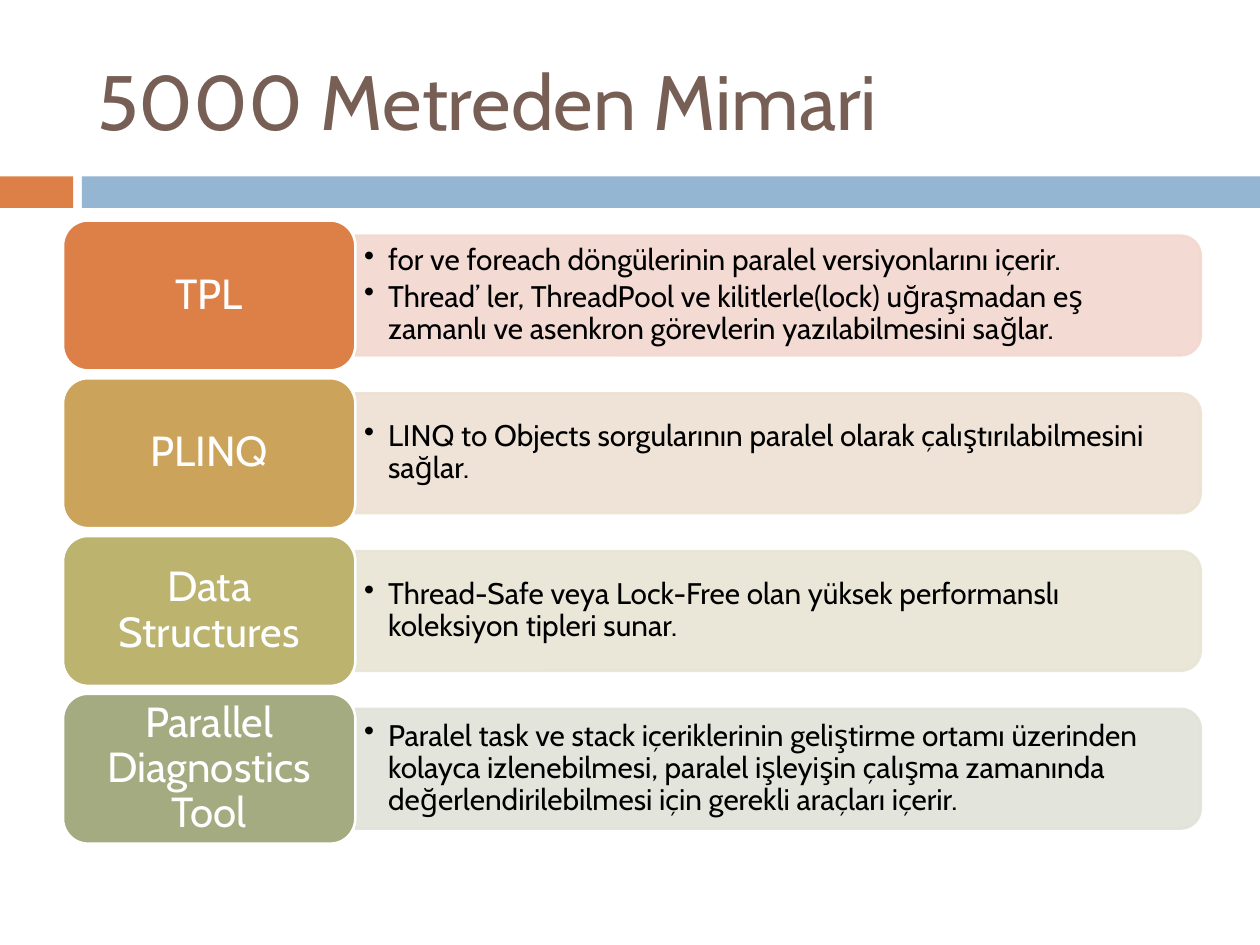
from lxml import etree
from pptx import Presentation, util as u
from pptx.dml.color import RGBColor
from pptx.enum import shapes, text
from pptx.oxml.ns import qn

COLS, ROWS = 100, 75
HUES = {
    "title": "775F55", "orange": "DD8047", "blue": "94B6D2",
    "white": "FFFFFF", "black": "000000",
    "gold": "CCA35B", "olive": "BBB36E", "sage": "A5AB81",
    "rose": "F2D8CF", "sand": "EDE1D2", "cream": "E8E5D5", "mist": "E1E2D8",
}
ITEMS = [
    ("TPL", "orange", "rose", [
        "for ve foreach döngülerinin paralel versiyonlarını içerir.",
        "Thread’ ler, ThreadPool ve kilitlerle(lock) uğraşmadan eş zamanlı "
        "ve asenkron görevlerin yazılabilmesini sağlar."]),
    ("PLINQ", "gold", "sand", [
        "LINQ to Objects sorgularının paralel olarak çalıştırılabilmesini sağlar."]),
    ("Data Structures", "olive", "cream", [
        "Thread-Safe veya Lock-Free olan yüksek performanslı koleksiyon tipleri sunar."]),
    ("Parallel Diagnostics Tool", "sage", "mist", [
        "Paralel task ve stack içeriklerinin geliştirme ortamı üzerinden kolayca "
        "izlenebilmesi, paralel işleyişin çalışma zamanında değerlendirilebilmesi "
        "için gerekli araçları içerir."]),
]


class Deck:
    font = "Cabin"

    def __init__(self):
        self.prs = Presentation()
        self.prs.slide_width, self.prs.slide_height = u.Inches(10), u.Inches(7.5)
        self.slide = self.prs.slides.add_slide(self.prs.slide_layouts[5])

    def hue(self, name):
        return RGBColor.from_string(HUES[name])

    def box(self, x, y, w, h):
        dx, dy = self.prs.slide_width / COLS, self.prs.slide_height / ROWS
        return [round(v) for v in (x * dx, y * dy, w * dx, h * dy)]

    def style(self, para, size, color):
        para.font.name, para.font.size = self.font, u.Pt(size)
        para.font.color.rgb = self.hue(color)

    def frame(self, shape, side, edge):
        frame = shape.text_frame
        frame.word_wrap = True
        frame.vertical_anchor = text.MSO_ANCHOR.MIDDLE
        frame.margin_left = frame.margin_right = u.Inches(side)
        frame.margin_top = frame.margin_bottom = u.Inches(edge)
        return frame

    def title(self, words, *area):
        shape = self.slide.shapes.title
        shape.left, shape.top, shape.width, shape.height = self.box(*area)
        frame = self.frame(shape, 0.1, 0.05)
        frame.text = words
        para = frame.paragraphs[0]
        para.alignment = text.PP_ALIGN.LEFT
        self.style(para, 44, "title")

    def shape(self, kind, fill, area, line=None):
        shape = self.slide.shapes.add_shape(kind, *self.box(*area))
        shape.shadow.inherit = False
        shape.fill.solid()
        shape.fill.fore_color.rgb = self.hue(fill)
        if line:
            shape.line.color.rgb = self.hue(line)
            shape.line.width = u.Pt(1.5)
        else:
            shape.line.fill.background()
        return shape

    def bar(self, fill, *area):
        self.shape(shapes.MSO_SHAPE.RECTANGLE, fill, area)

    def panel(self, fill, x, y, w, h):
        area = (x + (w - h) / 2, y + (h - w) / 2, h, w)
        shape = self.shape(shapes.MSO_SHAPE.ROUND_2_SAME_RECTANGLE, fill, area, fill)
        shape.rotation = 90
        for color in shape.element.spPr.iter(qn("a:srgbClr")):
            etree.SubElement(color, qn("a:alpha"), val="90000")

    def label(self, words, fill, *area):
        shape = self.shape(shapes.MSO_SHAPE.ROUNDED_RECTANGLE, fill, area, "white")
        frame = self.frame(shape, 0.15, 0.05)
        frame.text = words
        para = frame.paragraphs[0]
        para.alignment, para.line_spacing = text.PP_ALIGN.CENTER, 0.9
        self.style(para, 24, "white")

    def bullets(self, lines, *area):
        frame = self.frame(self.slide.shapes.add_textbox(*self.box(*area)), 0.07, 0.04)
        for i, line in enumerate(lines):
            para = frame.paragraphs[0] if i == 0 else frame.add_paragraph()
            para.text, para.line_spacing = line, 0.9
            if i:
                para.space_before = u.Pt(2.5)
            props = para._p.get_or_add_pPr()
            props.set("marL", str(u.Inches(0.19)))
            props.set("indent", str(-u.Inches(0.19)))
            etree.SubElement(props, qn("a:buChar"), char="•")
            self.style(para, 17, "black")


def main():
    deck = Deck()
    deck.bar("orange", 0, 14, 5.8, 2.5)
    deck.bar("blue", 6.5, 14, 93.5, 2.5)
    deck.title("5000 Metreden Mimari", 6.7, 2.5, 89.2, 10.8)
    for i, (name, dark, pale, lines) in enumerate(ITEMS):
        top = 17.5 + 12.52 * i
        deck.panel(pale, 28.2, top + 1.2, 67.1, 9.5)
        deck.bullets(lines, 28.2, top + 1.65, 66.7, 8.6)
        deck.label(name, dark, 5, top, 23.2, 11.9)
    deck.prs.save("out.pptx")


if __name__ == "__main__":
    main()
